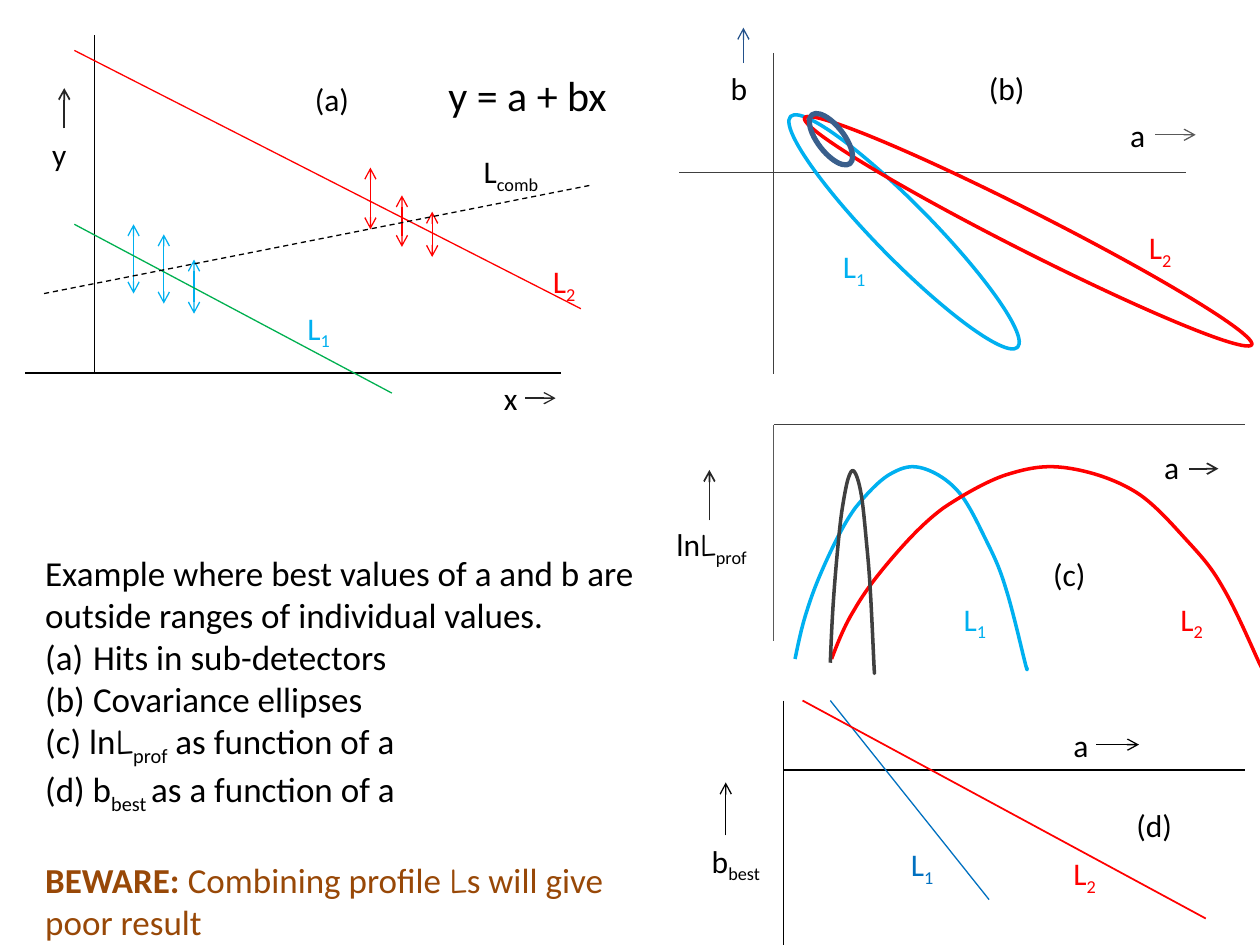
from lxml import etree
from pptx import Presentation, util as u
from pptx.dml.color import RGBColor
from pptx.enum import dml, shapes, text
from pptx.oxml.ns import qn

INK = {
    "black": "000000", "coal": "262626", "dark": "404040", "grey": "595959",
    "red": "FF0000", "sky": "00B0F0", "green": "00B050", "blue": "0070C0",
    "navy": "23518B", "steel": "3A5F8C", "brown": "984807",
}
FONT = "Calibri"
SCRIPT = "Comic Neue"
HUMP = [
    (0, 1.52), (.05, 1.39), (.1, 1.26), (.18, 1.13), (.26, .99), (.36, .86),
    (.48, .72), (.6, .58), (.74, .43), (.89, .32), (1.04, .22), (1.23, .11),
    (1.38, .06), (1.54, .01), (1.67, -.02), (1.84, 0), (2.01, .02),
    (2.22, .08), (2.39, .18), (2.55, .27), (2.71, .46), (2.83, .59),
    (2.95, .72), (3.02, .8), (3.11, .96), (3.2, 1.11), (3.33, 1.41),
    (3.38, 1.52), (3.43, 1.63), (3.43, 1.61), (3.42, 1.59),
]


def inch(n):
    return u.Cm(n * 2.54)


def rgb(ink):
    return RGBColor.from_string(INK[ink])


def stroke(item, ink, width):
    item.line.color.rgb = rgb(ink)
    item.line.width = u.Pt(width)


def line(slide, start, end, ink="black", width=.75, tips=(), dash=False):
    link = slide.shapes.add_connector(
        shapes.MSO_CONNECTOR.STRAIGHT, *map(inch, start + end))
    stroke(link, ink, width)
    if dash:
        link.line.dash_style = dml.MSO_LINE.DASH
    for tip in tips:
        etree.SubElement(link.line._get_or_add_ln(), qn(f"a:{tip}"), type="arrow")
    etree.SubElement(link._element.spPr, qn("a:effectLst"))


def arrow(slide, start, end, ink="black", width=.75):
    line(slide, start, end, ink, width, ["tailEnd"])


def bar(slide, x, top, foot, ink):
    line(slide, (x, top), (x, foot), ink, tips=["headEnd", "tailEnd"])


def oval(slide, box, turn, ink, width):
    ring = slide.shapes.add_shape(shapes.MSO_SHAPE.OVAL, *map(inch, box))
    ring.rotation = turn
    ring.shadow.inherit = False
    ring.fill.background()
    stroke(ring, ink, width)


def hump(slide, left, top, width, ink):
    spots = [(inch(left + x * width / 3.42), inch(top + y)) for x, y in HUMP]
    pen = slide.shapes.build_freeform(*spots[0], scale=1.0)
    pen.add_line_segments(spots[1:], close=False)
    curve = pen.convert_to_shape()
    curve.shadow.inherit = False
    curve.fill.background()
    stroke(curve, ink, 2)
    trace = curve._element.find(".//" + qn("a:path"))
    legs = trace.findall(qn("a:lnTo"))
    for i in range(0, len(legs), 3):
        bend = etree.SubElement(trace, qn("a:cubicBezTo"))
        for leg in legs[i:i + 3]:
            bend.append(leg[0])
            trace.remove(leg)


def run(para, words, size=18, ink="black", sub=False, bold=False, font=FONT):
    part = para.add_run()
    part.text = words
    part.font.size = u.Pt(size)
    part.font.name = font
    part.font.bold = bold
    part.font.color.rgb = rgb(ink)
    if sub:
        part._r.get_or_add_rPr().set("baseline", "-25000")


def frame(slide, x, y, w, h=.4):
    body = slide.shapes.add_textbox(*map(inch, (x, y, w, h))).text_frame
    body.word_wrap = True
    body.auto_size = text.MSO_AUTO_SIZE.SHAPE_TO_FIT_TEXT
    return body


def label(slide, x, y, w, words, sub="", ink="black"):
    para = frame(slide, x, y, w).paragraphs[0]
    run(para, words, ink=ink)
    if sub:
        run(para, sub, ink=ink, sub=True)


def fit(slide):
    line(slide, (.75, .28), (.75, 2.96))
    line(slide, (.2, 2.96), (4.45, 2.96))
    for x, top, foot in [(1.06, 1.78, 2.33), (1.3, 1.86, 2.41), (1.54, 2.06, 2.49)]:
        bar(slide, x, top, foot, "sky")
    line(slide, (.59, 1.78), (3.11, 3.12), "green")
    for x, top, foot in [(3.43, 1.68, 2.04), (3.19, 1.55, 1.96), (2.94, 1.33, 1.82)]:
        bar(slide, x, top, foot, "red")
    line(slide, (.59, .4), (4.61, 2.45), "red")
    line(slide, (.35, 2.33), (4.69, 1.47), dash=True)
    arrow(slide, (4.17, 3.16), (4.41, 3.16), "coal")
    arrow(slide, (.51, 1.02), (.51, .7), "coal", 1)
    label(slide, .26, 1.02, .5, " y")
    label(slide, 3.9, 2.96, .39, "x")
    label(slide, 4.29, 2.03, .55, "L", "2", "red")
    label(slide, 2.34, 2.4, .55, "L", "1", "sky")
    label(slide, 3.74, 1.16, .94, "L", "comb")
    para = frame(slide, 2.4, .5, 2.87, .5).paragraphs[0]
    tabs = etree.SubElement(para._p.get_or_add_pPr(), qn("a:tabLst"))
    etree.SubElement(tabs, qn("a:tab"), pos=str(inch(1.06)), algn="l")
    run(para, "(a)\t")
    run(para, "y = a + bx", 24)


def rings(slide):
    line(slide, (5.39, 1.37), (9.41, 1.37), "dark")
    line(slide, (6.14, .42), (6.14, 2.97), "dark")
    oval(slide, (5.89, 1.62, 2.57, .44), 225.5, "sky", 2)
    oval(slide, (6.17, 1.68, 3.98, .31), 206.9, "red", 2)
    oval(slide, (6.49, .86, .21, .49), 322.3, "steel", 3)
    arrow(slide, (9.17, 1.07), (9.49, 1.07), "grey")
    arrow(slide, (5.9, .5), (5.9, .22), "navy")
    label(slide, 8.87, .87, .55, "a")
    label(slide, 5.7, .5, .38, "b")
    label(slide, 7.75, .5, .79, "(b)")
    label(slide, 9.02, 1.76, .66, "L", "2", "red")
    label(slide, 6.59, 1.91, .62, "L", "1", "sky")


def humps(slide):
    hump(slide, 6.31, 3.71, 1.84, "sky")
    hump(slide, 6.6, 3.71, 3.42, "red")
    hump(slide, 6.59, 3.74, .35, "dark")
    line(slide, (9.88, 3.37), (6.14, 3.37), "dark")
    line(slide, (6.14, 3.37), (6.14, 5.09), "grey")
    arrow(slide, (9.44, 3.72), (9.67, 3.72), "coal", 1)
    arrow(slide, (5.63, 4.13), (5.63, 3.73), "coal", 1)
    label(slide, 9.14, 3.51, .42, "a")
    label(slide, 8.26, 4.36, .56, "(c)")
    label(slide, 7.55, 4.71, .59, "L", "1", "sky")
    label(slide, 9.27, 4.71, .57, "L", "2", "red")
    para = frame(slide, 5.27, 4.12, .94).paragraphs[0]
    run(para, "ln")
    run(para, "L", font=SCRIPT)
    run(para, "prof", sub=True)


def slopes(slide):
    line(slide, (6.22, 6.11), (9.88, 6.11), width=1)
    line(slide, (6.22, 5.56), (6.22, 7.5))
    line(slide, (6.59, 5.56), (7.85, 7.14), "blue")
    line(slide, (6.37, 5.56), (9.57, 7.29), "red", 1)
    arrow(slide, (5.76, 6.63), (5.76, 6.21))
    arrow(slide, (8.7, 5.91), (9.04, 5.91))
    label(slide, 5.55, 6.63, .79, "b", "best")
    label(slide, 8.42, 5.71, .47, "a")
    label(slide, 8.92, 6.35, .59, "(d)")
    label(slide, 7.13, 6.66, .55, "L", "1", "blue")
    label(slide, 8.42, 6.73, .55, "L", "2", "red")


def notes(slide):
    body = frame(slide, .26, 4.33, 5.01, 3.13)
    run(body.paragraphs[0], "Example where best values of a and b are "
        "outside ranges of individual values.", 20)
    for words in ("Hits in sub-detectors", "Covariance ellipses"):
        para = body.add_paragraph()
        props = para._p.get_or_add_pPr()
        props.set("marL", str(inch(.38)))
        props.set("indent", str(inch(-.38)))
        etree.SubElement(props, qn("a:buAutoNum"), type="alphaLcParenBoth")
        run(para, words, 20)
    para = body.add_paragraph()
    run(para, "(c) ln", 20)
    run(para, "L", 20, font=SCRIPT)
    run(para, "prof", 20, sub=True)
    run(para, " as function of a", 20)
    para = body.add_paragraph()
    run(para, "(d) b", 20)
    run(para, "best ", 20, sub=True)
    run(para, "as a function of a", 20)
    para = body.add_paragraph()
    para.space_before = u.Pt(24.4)
    run(para, "BEWARE: ", 20, "brown", bold=True)
    run(para, "Combining profile ", 20, "brown")
    run(para, "L", 20, "brown", font=SCRIPT)
    run(para, "s will give poor result", 20, "brown")


def main():
    deck = Presentation()
    deck.slide_width, deck.slide_height = u.Cm(25.4), u.Cm(19.05)
    slide = deck.slides.add_slide(deck.slide_layouts[6])
    for draw in (fit, rings, humps, slopes, notes):
        draw(slide)
    deck.save("out.pptx")


if __name__ == "__main__":
    main()
